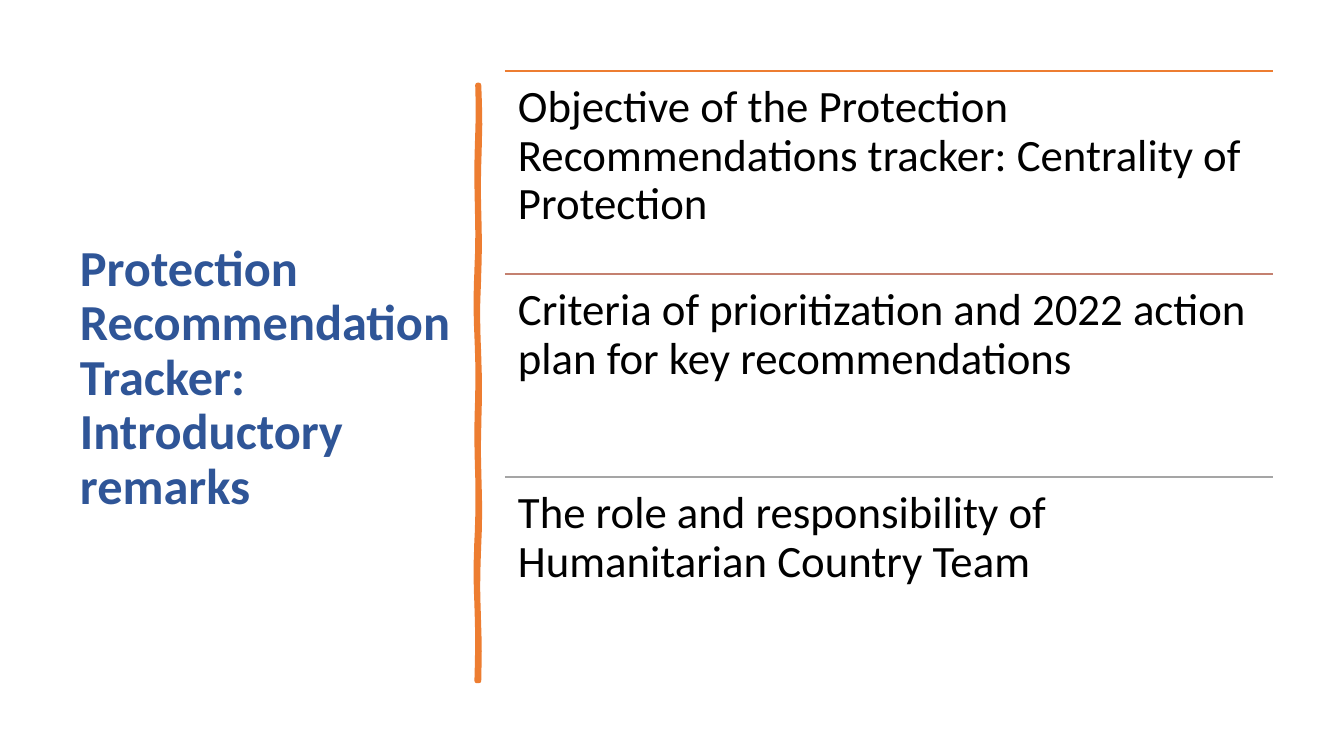
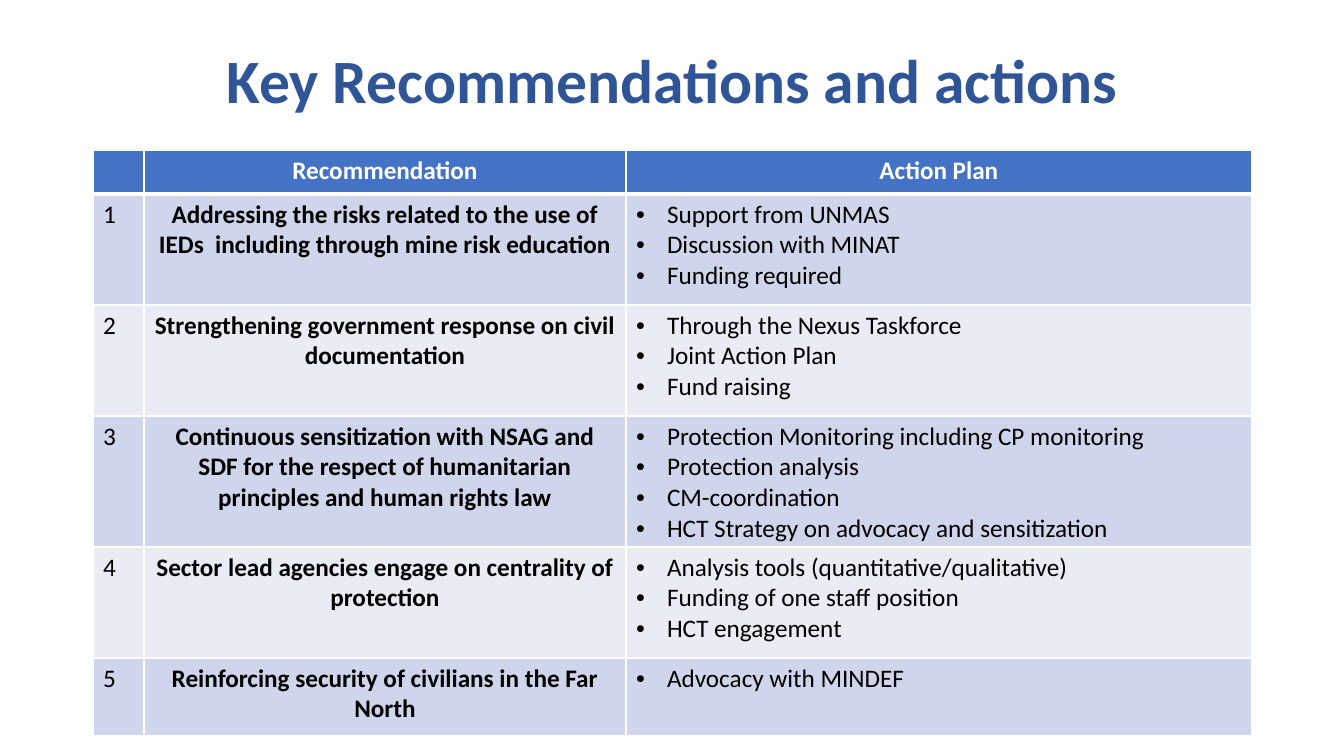
import math

import lxml.etree
import pptx
import pptx.dml.color
import pptx.enum.shapes
import pptx.enum.text
import pptx.oxml
import pptx.oxml.ns
import pptx.util

PX = 914400 / 100.8
FONT = "Calibri"
COLORS = {
    "title": "2F5597",
    "orange": "ED7D31",
    "clay": "C48170",
    "grey": "A5A5A5",
    "header": "4472C4",
    "odd": "CFD5EA",
    "even": "E9EBF5",
    "text": "000000",
    "white": "FFFFFF",
}
LEFT = pptx.enum.text.PP_ALIGN.LEFT
CENTER = pptx.enum.text.PP_ALIGN.CENTER
MIDDLE = pptx.enum.text.MSO_ANCHOR.MIDDLE
TOP = pptx.enum.text.MSO_ANCHOR.TOP

REMARKS = [
    ("Objective of the Protection Recommendations tracker: Centrality of Protection", "orange"),
    ("Criteria of prioritization and 2022 action plan for key recommendations", "clay"),
    ("The role and responsibility of Humanitarian Country Team", "grey"),
]
HEADINGS = ["", "Recommendation", "Action Plan"]
ACTIONS = [
    ("Addressing the risks related to the use of IEDs  including through mine risk education",
     ["Support from UNMAS", "Discussion with MINAT", "Funding required"]),
    ("Strengthening government response on civil documentation",
     ["Through the Nexus Taskforce", "Joint Action Plan", "Fund raising"]),
    ("Continuous sensitization with NSAG and SDF for the respect of humanitarian "
     "principles and human rights law",
     ["Protection Monitoring including CP monitoring", "Protection analysis",
      "CM-coordination", "HCT Strategy on advocacy and sensitization"]),
    ("Sector lead agencies engage on centrality of protection",
     ["Analysis tools (quantitative/qualitative)", "Funding of one staff position",
      "HCT engagement"]),
    ("Reinforcing security of civilians in the Far North", ["Advocacy with MINDEF"]),
]
COLUMN_WIDTHS = [51, 482, 626]
ROW_HEIGHTS = [44, 111, 111, 131, 111, 78]


def px(n):
    return pptx.util.Emu(round(n * PX))


def rgb(name):
    return pptx.dml.color.RGBColor.from_string(COLORS[name])


def child(parent, tag, **attrs):
    return lxml.etree.SubElement(parent, pptx.oxml.ns.qn(tag), **attrs)


def add_run(p, text, size, color, bold=False):
    r = p.add_run()
    r.text = text
    r.font.name = FONT
    r.font.size = pptx.util.Pt(size)
    r.font.bold = bold
    r.font.color.rgb = rgb(color)


def add_text(s, box, text, size, color, bold=False, align=LEFT, anchor=TOP, inset=None):
    tf = s.shapes.add_textbox(*map(px, box)).text_frame
    tf.word_wrap = True
    tf.vertical_anchor = anchor
    if inset is not None:
        tf.margin_left = tf.margin_right = tf.margin_top = tf.margin_bottom = px(inset)
    p = tf.paragraphs[0]
    p.alignment = align
    p.line_spacing = 0.9
    add_run(p, text, size, color, bold)


def add_title(s, box, text, size, align=LEFT):
    add_text(s, box, text, size, "title", True, align, MIDDLE)


def add_brush_stroke(s, box):
    x, y, w, h = box
    units = 10
    steps = 60

    def sway(t):
        return math.sin(9 * math.pi * t) * 0.7 + math.sin(4 * math.pi * t) * 0.4

    ts = [i / steps for i in range(steps + 1)]
    right = [((x + w + sway(t)) * units, (y + h * t) * units) for t in ts]
    left = [((x + sway(t + 0.02)) * units, (y + h * t) * units) for t in reversed(ts)]
    outline = right + left
    builder = s.shapes.build_freeform(*outline[0], scale=PX / units)
    builder.add_line_segments(outline[1:], close=True)
    sp = builder.convert_to_shape()
    sp.shadow.inherit = False
    sp.fill.solid()
    sp.fill.fore_color.rgb = rgb("orange")
    sp.line.color.rgb = rgb("orange")
    sp.line.width = pptx.util.Pt(3.25)
    child(sp.line._get_or_add_ln(), "a:round")


def add_rule(s, x, y, w, color):
    line = s.shapes.add_connector(
        pptx.enum.shapes.MSO_CONNECTOR.STRAIGHT, px(x), px(y), px(x + w), px(y))
    line.line.color.rgb = rgb(color)
    line.line.width = pptx.util.Pt(1)
    child(line._element.spPr, "a:effectLst")


def add_remarks(s, box):
    x, y, w, h = box
    step = h // len(REMARKS)
    for i, (text, color) in enumerate(REMARKS):
        top = y + i * step
        add_rule(s, x, top, w, color)
        add_text(s, (x, top, w, step), text, 32, "text", inset=13)


def style_cell(cell, fill, top, bottom):
    tcPr = cell._tc.get_or_add_tcPr()
    for side, width in (("L", 1), ("R", 1), ("T", top), ("B", bottom)):
        ln = child(tcPr, "a:ln" + side, w=str(pptx.util.Pt(width)))
        child(child(ln, "a:solidFill"), "a:srgbClr", val=COLORS["white"])
    cell.fill.solid()
    cell.fill.fore_color.rgb = rgb(fill)


def fill_cell(cell, lines, color="text", bold=False, align=LEFT, bullets=False):
    tf = cell.text_frame
    for i, text in enumerate(lines):
        p = tf.add_paragraph() if i else tf.paragraphs[0]
        p.alignment = align
        if bullets:
            pPr = p._p.get_or_add_pPr()
            pPr.set("marL", str(px(31)))
            pPr.set("indent", str(-px(31)))
            child(pPr, "a:buFont", typeface="Arial")
            child(pPr, "a:buChar", char="•")
        add_run(p, text, 18, color, bold)


def add_action_table(s, x, y):
    table = s.shapes.add_table(
        len(ROW_HEIGHTS), len(COLUMN_WIDTHS), px(x), px(y),
        px(sum(COLUMN_WIDTHS)), px(sum(ROW_HEIGHTS))).table
    table.horz_banding = False
    for column, width in zip(table.columns, COLUMN_WIDTHS):
        column.width = px(width)
    for i, (row, height) in enumerate(zip(table.rows, ROW_HEIGHTS)):
        row.height = px(height)
        fill = "header" if i == 0 else "odd" if i % 2 else "even"
        for cell in row.cells:
            style_cell(cell, fill, 3 if i == 1 else 1, 3 if i == 0 else 1)
    for j, heading in enumerate(HEADINGS):
        if heading:
            fill_cell(table.cell(0, j), [heading], "white", True, CENTER)
    for i, (recommendation, plan) in enumerate(ACTIONS, 1):
        fill_cell(table.cell(i, 0), [str(i)])
        fill_cell(table.cell(i, 1), [recommendation], bold=True, align=CENTER)
        fill_cell(table.cell(i, 2), plan, bullets=True)


def add_remarks_slide(prs):
    s = prs.slides.add_slide(prs.slide_layouts[6])
    add_title(s, (70, 71, 396, 616),
              "Protection Recommendation Tracker: Introductory remarks", 36)
    add_brush_stroke(s, (477, 85, 2, 596))
    add_remarks(s, (505, 71, 768, 609))


def add_actions_slide(prs):
    s = prs.slides.add_slide(prs.slide_layouts[6])
    add_title(s, (93, 40, 1159, 88), "Key Recommendations and actions", 44, CENTER)
    add_action_table(s, 93, 150)


def main():
    prs = pptx.Presentation()
    prs.slide_width = px(1344)
    prs.slide_height = px(756)
    add_remarks_slide(prs)
    add_actions_slide(prs)
    prs.save("out.pptx")


if __name__ == "__main__":
    main()
